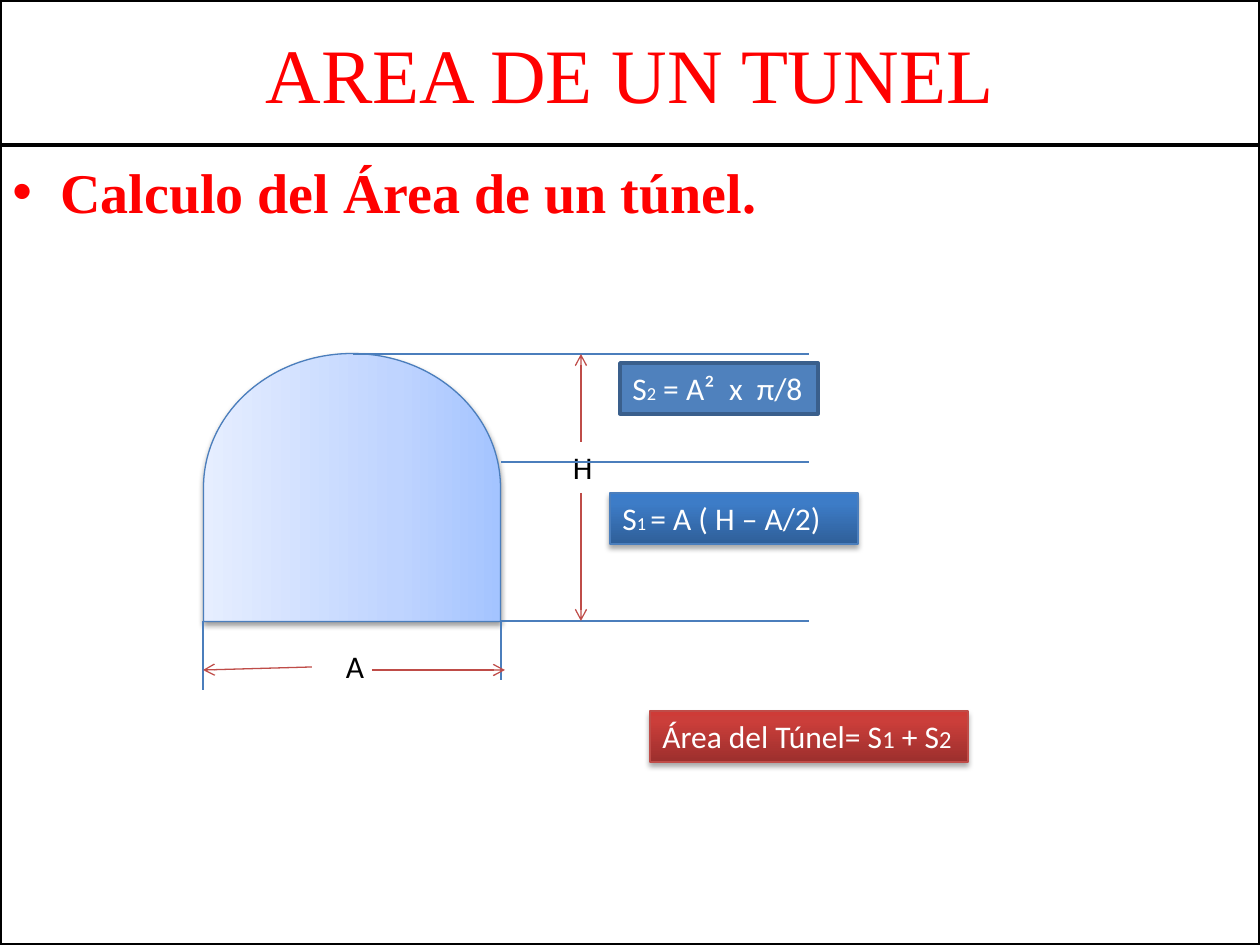
from lxml import etree
from pptx import Presentation
from pptx.dml.color import RGBColor
from pptx.enum.shapes import MSO_CONNECTOR, MSO_SHAPE
from pptx.enum.text import MSO_ANCHOR, PP_ALIGN
from pptx.oxml import parse_xml
from pptx.oxml.ns import nsdecls, qn
from pptx.util import Inches, Pt

PX = 7257  # EMU per px, 126 px to the inch
BLUE, RED, BLACK, WHITE = "4B7EBC", "BF4C48", "000000", "FFFFFF"
rgb = RGBColor.from_string


def write(shape, *runs, size=18, font="Calibri", color=WHITE, bold=False,
          align=PP_ALIGN.LEFT, anchor=MSO_ANCHOR.TOP, bullet=False, wrap=True):
    """Each run is a string, or a (string, size) pair."""
    frame = shape.text_frame
    frame.word_wrap = wrap
    frame.vertical_anchor = anchor
    paragraph = frame.paragraphs[0]
    paragraph.alignment = align
    if bullet:
        props = paragraph._p.get_or_add_pPr()
        props.set("marL", str(48 * PX))
        props.set("indent", str(-48 * PX))
        etree.SubElement(props, qn("a:buFont")).set("typeface", "Arial")
        etree.SubElement(props, qn("a:buChar")).set("char", "•")
    for part in runs:
        text, points = (part, size) if isinstance(part, str) else part
        run = paragraph.add_run()
        run.text = text
        run.font.size = Pt(points)
        run.font.name = font
        run.font.bold = bold
        run.font.color.rgb = rgb(color)


def add_block(kind, box, fill, line, width, shadow=0):
    """fill is a colour, or (position, colour) stops from bottom to top; shadow is an opacity."""
    shape = slide.shapes.add_shape(kind, *(n * PX for n in box))
    shape.shadow.inherit = False
    if isinstance(fill, str):
        shape.fill.solid()
        shape.fill.fore_color.rgb = rgb(fill)
    else:
        stops = "".join(f'<a:gs pos="{pos * 1000}"><a:srgbClr val="{color}"/></a:gs>'
                        for pos, color in fill)
        shape.fill.gradient()
        shape.fill.gradient_angle = 90
        old_stops = shape._element.spPr.find(qn("a:gradFill")).find(qn("a:gsLst"))
        old_stops.getparent().replace(
            old_stops, parse_xml(f'<a:gsLst {nsdecls("a")}>{stops}</a:gsLst>'))
    shape.line.color.rgb = rgb(line)
    shape.line.width = Pt(width)
    if shadow:
        shape._element.spPr.find(qn("a:effectLst")).append(parse_xml(
            f'<a:outerShdw {nsdecls("a")} blurRad="{Pt(3.1)}" dist="{Pt(1.8)}" dir="5400000"'
            f' rotWithShape="0"><a:srgbClr val="{BLACK}"><a:alpha val="{shadow * 1000}"/>'
            '</a:srgbClr></a:outerShdw>'))
    return shape


prs = Presentation()
prs.slide_width, prs.slide_height = Inches(10), Inches(7.5)
slide = prs.slides.add_slide(prs.slide_layouts[6])

# Heading and body panels
title = add_block(MSO_SHAPE.RECTANGLE, (0, 0, 1260, 145), WHITE, BLACK, 2)
write(title, "AREA DE UN TUNEL", size=44, font="Times New Roman", color="FF0000",
      align=PP_ALIGN.CENTER, anchor=MSO_ANCHOR.MIDDLE)
body = add_block(MSO_SHAPE.RECTANGLE, (0, 145, 1260, 800), WHITE, BLACK, 2)
body.text_frame.margin_top = 12 * PX
write(body, "Calculo del Área de un túnel.", size=32, font="Times New Roman",
      color="FF0000", bold=True, bullet=True)

# Tunnel section, turned so that its vault points up
tunnel = add_block(MSO_SHAPE.FLOWCHART_DELAY, (218, 339, 268, 297),
                   [(0, "A4C4FF"), (35, "BFD4FF"), (100, "E6EEFF")], BLUE, 0.75, shadow=38)
tunnel.rotation = 270

# Formulas
blue_stops = [(0, "2F5F99"), (80, "3D7CC7"), (100, "3A7CCB")]
red_stops = [(0, "9C2F2D"), (80, "CB3E3A"), (100, "CE3B37")]
formulas = [
    ((620, 363, 198, 51), "4F81BD", "3A5F8C", 2, 0, ["S", ("2", 10.5), " = A²  x  π/8"]),
    ((610, 493, 248, 51), blue_stops, BLUE, 0.75, 35, ["S", ("1 ", 10.5), "= A ( H – A/2)"]),
    ((650, 711, 318, 51), red_stops, RED, 0.75, 35,
     ["Área del Túnel= S", ("1", 14), " + S", ("2", 14)]),
]
for box, fill, line, width, shadow, runs in formulas:
    formula = add_block(MSO_SHAPE.RECTANGLE, box, fill, line, width, shadow)
    write(formula, *runs, wrap=False)

# Dimension letters
for letter, left, top, indent in [("H", 561, 442, 12), ("A", 312, 641, 34)]:
    label = slide.shapes.add_textbox(left * PX, top * PX, 90 * PX, 51 * PX)
    label.text_frame.margin_left = indent * PX
    write(label, letter, color=BLACK)

# Extension lines, then dimension arrows
crown, spring, floor = 354, 462, 621
left_wall, right_wall, height_x, line_end = 203, 501, 581, 809
extensions = [
    (353, crown, height_x, crown),
    (height_x, crown, line_end, crown),
    (right_wall, spring, line_end, spring),
    (right_wall, floor, height_x + 10, floor),
    (height_x, floor, line_end, floor),
    (left_wall, floor, left_wall, 690),
    (right_wall, floor, right_wall, 680),
]
arrows = [
    (312, 667, left_wall, 670),
    (372, 670, 505, 670),
    (height_x, 442, height_x, crown),
    (height_x, 493, height_x, floor),
]
for segments, color in [(extensions, BLUE), (arrows, RED)]:
    for ends in segments:
        rule = slide.shapes.add_connector(MSO_CONNECTOR.STRAIGHT, *(n * PX for n in ends))
        rule.line.color.rgb = rgb(color)
        rule.line.width = Pt(0.75)
        etree.SubElement(rule._element.spPr, qn("a:effectLst"))
        if segments is arrows:
            etree.SubElement(rule.line._get_or_add_ln(), qn("a:tailEnd")).set("type", "arrow")

prs.save("out.pptx")
